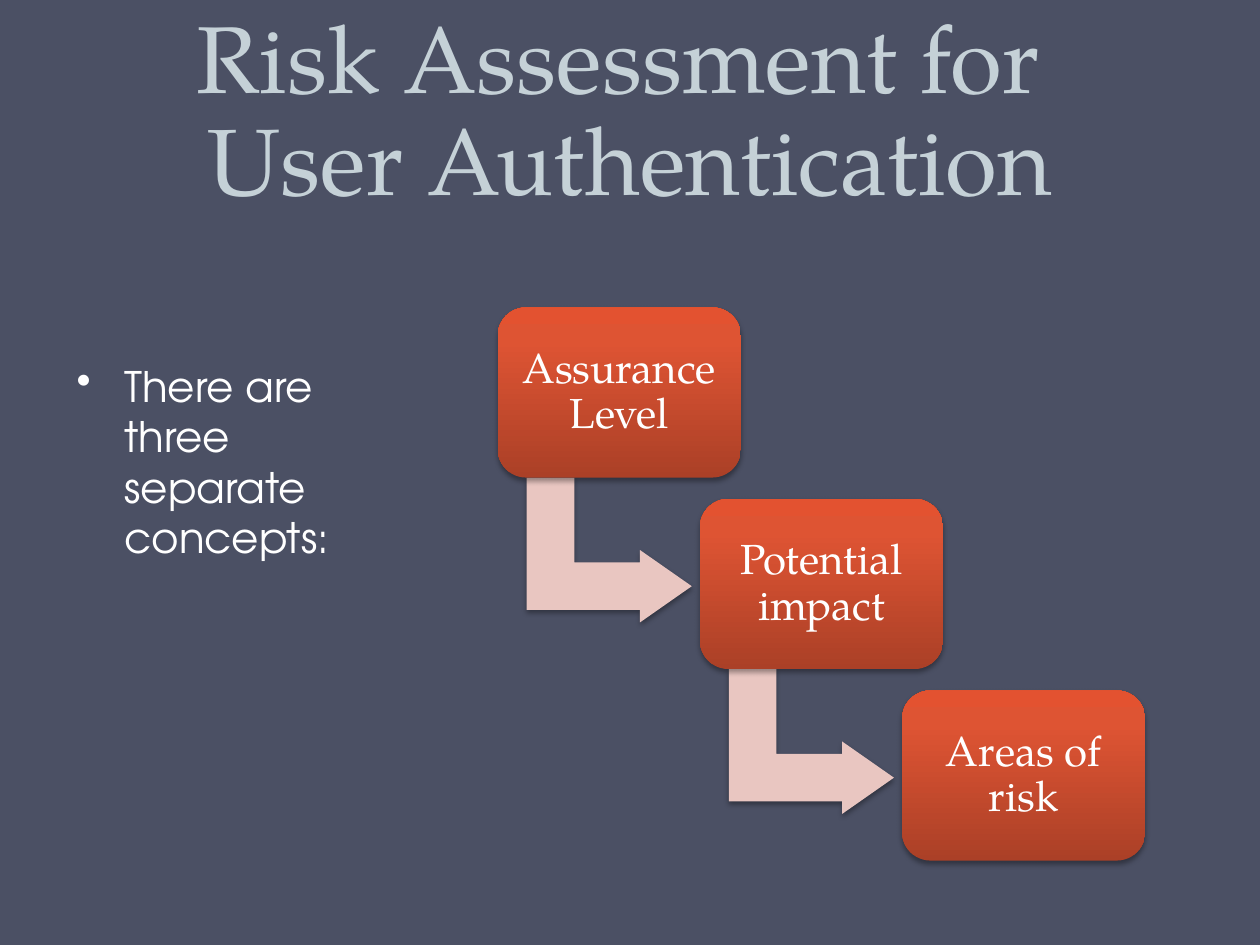
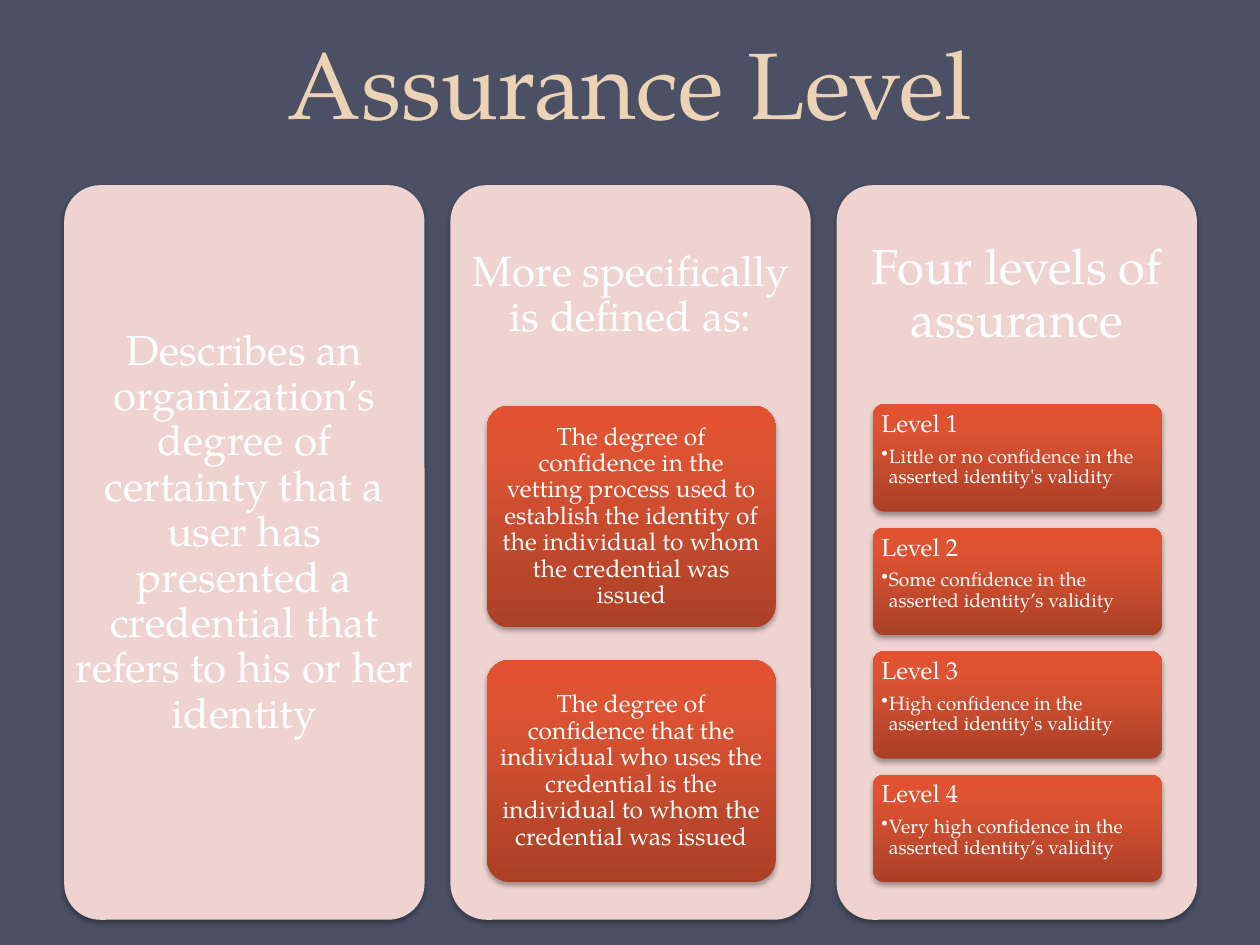
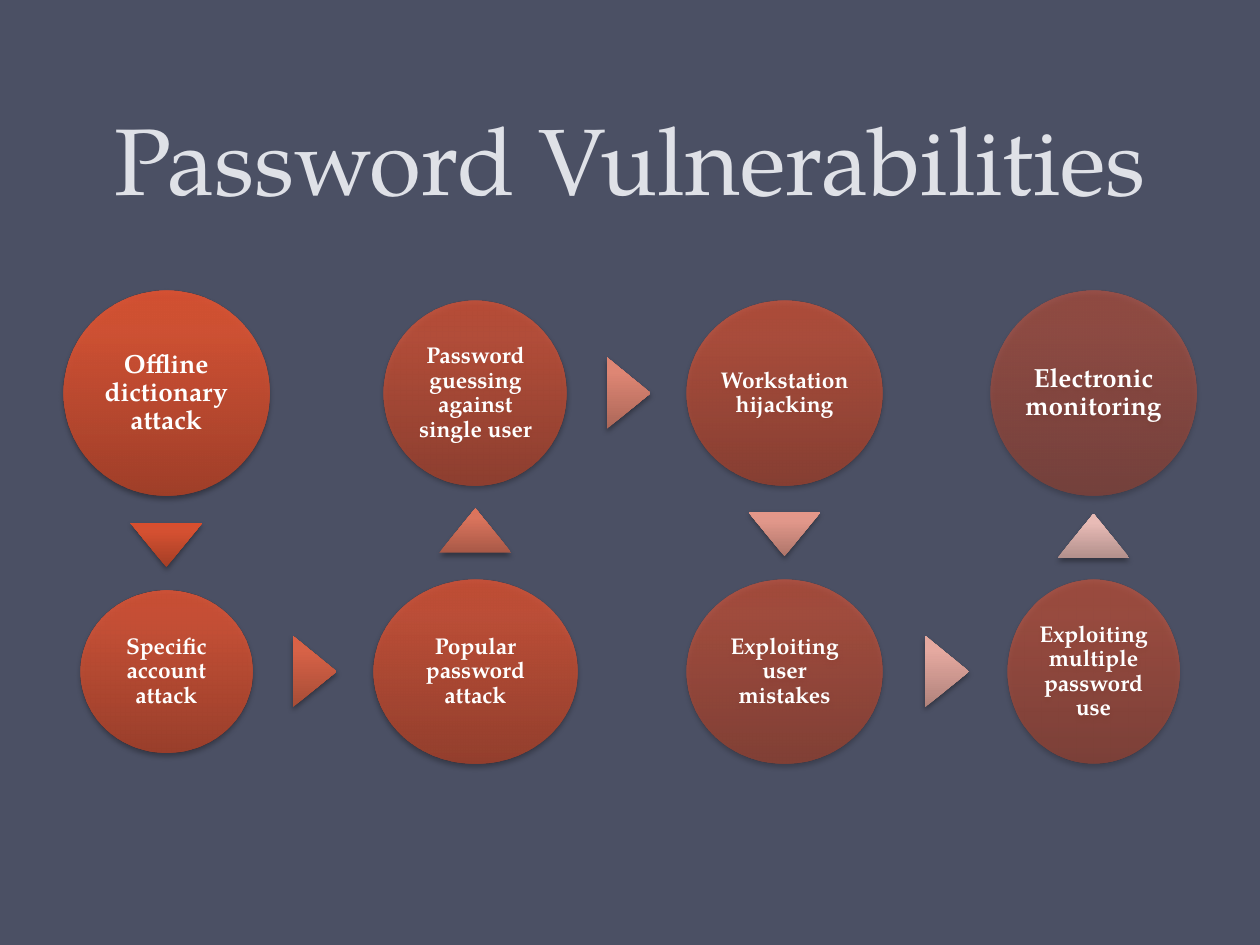
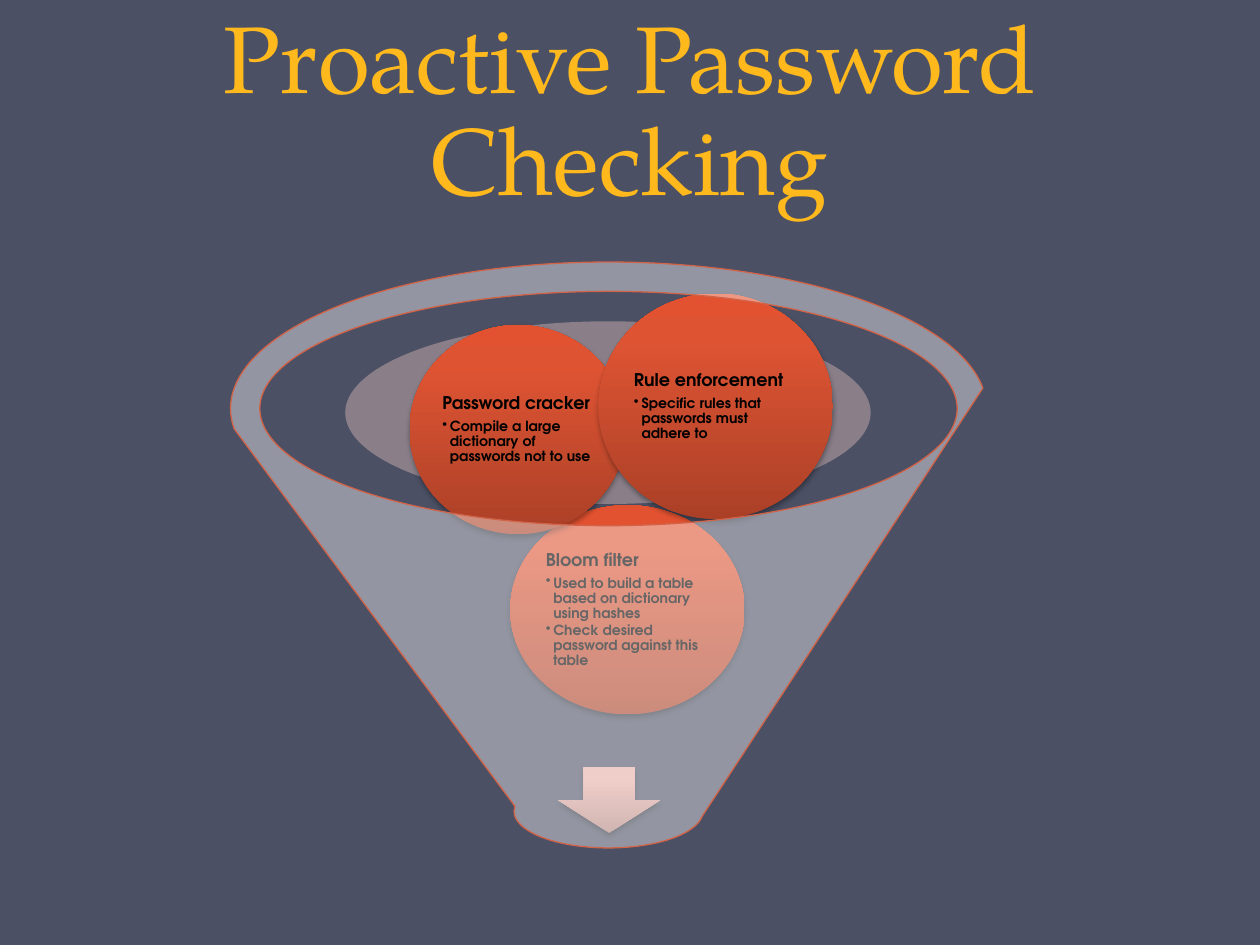
from copy import deepcopy
from dataclasses import dataclass

from lxml.etree import SubElement
from pptx import Presentation
from pptx.dml.color import RGBColor as Color
from pptx.enum.shapes import MSO_SHAPE as Preset
from pptx.enum.text import MSO_ANCHOR as Anchor, PP_ALIGN as Align
from pptx.oxml.ns import qn
from pptx.util import Inches, Pt


@dataclass(frozen=True)
class Theme:
    background: Color = Color.from_string("4B5064")
    white: Color = Color.from_string("FFFFFF")
    black: Color = Color.from_string("000000")
    pink: Color = Color.from_string("E9C6C1")
    panel: Color = Color.from_string("EED3D0")
    rim: Color = Color.from_string("D16349")
    title_outline: str = "FF6600"
    red: tuple = ("AB4027", "DE5433", "E35230")
    first_arrow: tuple = ("A43E25", "D45031", "D84E2E")
    last_arrow: tuple = ("B3908C", "E8BBB6", "EABCB6")
    funnel_arrow: tuple = ("B1847F", "E5ACA4", "E8ACA4")
    stops: tuple = (0, 0.8, 1)
    serif: str = "TeX Gyre Pagella"
    sans: str = "TeX Gyre Adventor"
    title_size: int = 54
    title_leading: int = 58
    heading_size: int = 28
    large_size: int = 24
    circle_size: int = 15
    small_circle_size: int = 13
    card_size: int = 14
    card_bullet_size: int = 11
    ball_size: int = 10
    ball_bullet_size: int = 8


theme = Theme()
presentation = Presentation()
presentation.slide_width = Inches(10)
presentation.slide_height = Inches(7.5)
GRID = presentation.slide_width / 100


def draw(slide, preset, column, row, columns, rows, fill=None, opacity=100,
         shadow=True, rotation=0, adjustments=()):
    box = [round(length * GRID) for length in (column, row, columns, rows)]
    if preset is None:
        return slide.shapes.add_textbox(*box)
    shape = slide.shapes.add_shape(preset, *box)
    shape.rotation = rotation
    for index, value in enumerate(adjustments):
        shape.adjustments[index] = value
    properties = shape._element.spPr
    if isinstance(fill, Color):
        shape.fill.solid()
        shape.fill.fore_color.rgb = fill
    else:
        shape.fill.gradient()
        shape.fill.gradient_angle = 90
        properties.find(qn("a:gradFill")).set("rotWithShape", "0")
        stop_list = properties.find(".//" + qn("a:gsLst"))
        stop_list.append(deepcopy(stop_list[0]))
        for stop, position, color in zip(shape.fill.gradient_stops, theme.stops, fill):
            stop.position = position
            stop.color.rgb = Color.from_string(color)
    if opacity < 100:
        for color in properties.iter(qn("a:srgbClr")):
            SubElement(color, qn("a:alpha"), val=str(round(opacity * 1000)))
    shape.line.fill.background()
    shape.shadow.inherit = False
    if shadow:
        outer = SubElement(properties.find(qn("a:effectLst")), qn("a:outerShdw"),
                           blurRad=str(Pt(3.1)), dist=str(Pt(1.8)),
                           dir="5400000", rotWithShape="0")
        color = SubElement(outer, qn("a:srgbClr"), val=str(theme.black))
        SubElement(color, qn("a:alpha"), val="35000")
    return shape


def write(shape, text, size, bullets=(), bullet_size=None, color=theme.white,
          font=theme.serif, bold=False, align=Align.CENTER, anchor=Anchor.MIDDLE,
          margins=(0.1, 0.1), spacing=0.9, indent=0.06, after=0.35):
    frame = shape.text_frame
    frame.word_wrap = True
    frame.vertical_anchor = anchor
    frame.margin_left = frame.margin_right = Inches(margins[0])
    frame.margin_top = frame.margin_bottom = Inches(margins[1])
    frame.text = "\n".join([text] * bool(text) + list(bullets))
    for index, paragraph in enumerate(frame.paragraphs):
        bulleted = index > 0 or not text
        paragraph.alignment = align
        paragraph.line_spacing = spacing
        paragraph_size = bullet_size if bulleted else size
        paragraph.space_after = Pt(round(paragraph_size * (0.15 if index else after), 1))
        if bulleted:
            paragraph.level = 1 if text else 0
            settings = paragraph._p.get_or_add_pPr()
            settings.set("marL", str(Inches(indent)))
            settings.set("indent", str(-Inches(indent)))
            SubElement(settings, qn("a:buChar"), char="•")
        for run in paragraph.runs:
            run.font.size = Pt(paragraph_size)
            run.font.name = font
            run.font.bold = bold
            run.font.color.rgb = color


slides = []
titles = []
for text, color, rows in [
    ("Risk Assessment for \vUser Authentication", "C5D1D7", 17.5),
    ("Assurance Level", "EDD3B6", 11.5),
    ("Password Vulnerabilities", "DFE1E7", 17.5),
    ("Proactive Password Checking", "FFB91D", 17.5),
]:
    slide = presentation.slides.add_slide(presentation.slide_layouts[6])
    slide.background.fill.solid()
    slide.background.fill.fore_color.rgb = theme.background
    title = draw(slide, None, 5, 0, 90, rows)
    write(title, text, theme.title_size, color=Color.from_string(color), anchor=Anchor.BOTTOM,
          margins=(0.1, 0.05), spacing=Pt(theme.title_leading), after=0)
    slides.append(slide)
    titles.append(title)
concepts, assurance, vulnerabilities, checking = slides

body = draw(concepts, None, 5.1, 28.1, 27.6, 31.4)
write(body, "", theme.large_size, ["There are three separate concepts:"], theme.large_size,
      font=theme.sans, align=Align.LEFT, anchor=Anchor.TOP, margins=(0.1, 0.05),
      spacing=1.0, indent=0.38, after=0)
steps = ["Assurance Level", "Potential impact", "Areas of risk"]
for index, text in enumerate(steps):
    column, row = 39.5 + 16.05 * index, 24.4 + 15.2 * index
    if index < len(steps) - 1:
        draw(concepts, Preset.BENT_UP_ARROW, column + 3.1, row + 12.7, 11.5, 13.1, theme.pink,
             rotation=90, adjustments=(0.328, 0.25, 0.358))
    step = draw(concepts, Preset.ROUNDED_RECTANGLE, column, row, 19.3, 13.5, theme.red,
                adjustments=(0.167,))
    write(step, text, theme.large_size)

run_properties = titles[1].text_frame.paragraphs[0].runs[0]._r.get_or_add_rPr()
outline = SubElement(run_properties, qn("a:ln"), w=str(Pt(0.75)))
SubElement(SubElement(outline, qn("a:solidFill")), qn("a:srgbClr"), val=theme.title_outline)
run_properties.insert(0, outline)

panels = [
    ("Describes an organization’s degree of certainty that a user has presented "
     "a credential that refers to his or her identity", theme.large_size, 55.2, 0.06, 0, 0, 0, []),
    ("More specifically is defined as:", theme.large_size, 17.5, 0.1, 32.2, 20.2, 17.6, [
        ("The degree of confidence in the vetting process used to establish the identity "
         "of the individual to whom the credential was issued", []),
        ("The degree of confidence that the individual who uses the credential is the "
         "individual to whom the credential was issued", []),
    ]),
    ("Four levels of assurance", theme.heading_size, 17.5, 0.12, 32.1, 9.8, 8.5, [
        ("Level 1", ["Little or no confidence in the asserted identity's validity"]),
        ("Level 2", ["Some confidence in the asserted identity’s validity"]),
        ("Level 3", ["High confidence in the asserted identity's validity"]),
        ("Level 4", ["Very high confidence in the asserted identity’s validity"]),
    ]),
]
for index, (text, size, rows, margin, first_row, row_step, card_rows, cards) in enumerate(panels):
    column = 5.1 + 30.65 * index
    draw(assurance, Preset.ROUNDED_RECTANGLE, column, 14.7, 28.6, 58.3, theme.panel,
         adjustments=(0.1,))
    heading = draw(assurance, None, column, 14.7, 28.6, rows)
    write(heading, text, size, margins=(margin, margin))
    for card_index, (card_text, bullets) in enumerate(cards):
        card = draw(assurance, Preset.ROUNDED_RECTANGLE, column + 2.9,
                    first_row + row_step * card_index, 22.9, card_rows, theme.red,
                    adjustments=(0.1,))
        write(card, card_text, theme.card_size, bullets, theme.card_bullet_size,
              align=Align.LEFT if bullets else Align.CENTER,
              anchor=Anchor.TOP if bullets else Anchor.MIDDLE, margins=(0.04, 0.03))

attacks = [
    ("Offline dictionary attack", 0, 0, 16.3, 16.3),
    ("Specific account attack", 0, 1, 13.6, 12.9),
    ("Popular password attack", 1, 1, 16.2, 14.6),
    ("Password guessing against single user", 1, 0, 14.5, 14.6),
    ("Workstation hijacking", 2, 0, 15.5, 14.6),
    ("Exploiting user mistakes", 2, 1, 15.5, 14.6),
    ("Exploiting multiple password use", 3, 1, 13.6, 14.6),
    ("Electronic monitoring", 3, 0, 16.3, 16.3),
]
ARROW_COLUMNS, ARROW_ROWS, ARROW_LEAD = 5.7, 3.5, 0.15
previous = None
for index, (text, place, line, columns, rows) in enumerate(attacks):
    x, y = 13.2 + 24.53 * place, 31.2 + 22.1 * line
    if previous:
        old_x, old_y, old_columns, old_rows = previous
        if x > old_x:
            rotation = 90
            arrow_x = (old_x + old_columns / 2 + x - columns / 2) / 2 + ARROW_LEAD
            arrow_y = y
        else:
            direction = 1 if y > old_y else -1
            rotation = 180 if direction > 0 else 0
            arrow_x = x
            arrow_y = ((old_y + y + direction * (old_rows - rows) / 2) / 2
                       + direction * ARROW_LEAD)
        share = (index - 1) / (len(attacks) - 2)
        shades = []
        for first, last in zip(theme.first_arrow, theme.last_arrow):
            channels = zip(Color.from_string(first), Color.from_string(last))
            shades.append(str(Color(*[round(a + (b - a) * share) for a, b in channels])))
        draw(vulnerabilities, Preset.ISOSCELES_TRIANGLE, arrow_x - ARROW_COLUMNS / 2,
             arrow_y - ARROW_ROWS / 2, ARROW_COLUMNS, ARROW_ROWS, shades, rotation=rotation)
    circle = draw(vulnerabilities, Preset.OVAL, x - columns / 2, y - rows / 2, columns, rows,
                  theme.red, opacity=90 - 40 * index / (len(attacks) - 1))
    size = theme.circle_size if index in (0, len(attacks) - 1) else theme.small_circle_size
    write(circle, text, size, bold=True, margins=(0.02, 0.02))
    previous = x, y, columns, rows

draw(checking, Preset.OVAL, 27.4, 25.5, 41.7, 14.5, theme.pink, opacity=40, shadow=False)
draw(checking, Preset.DOWN_ARROW, 44.3, 60.9, 8.1, 5.2, theme.funnel_arrow)
for text, bullets, column, row, columns, rows in [
    ("Bloom filter", ["Used to build a table based on dictionary using hashes",
                      "Check desired password against this table"], 40.5, 40.1, 18.6, 16.6),
    ("Password cracker", ["Compile a large dictionary of passwords not to use"],
     32.5, 25.8, 17.2, 16.6),
    ("Rule enforcement", ["Specific rules that passwords must adhere to"],
     47.5, 23.3, 18.6, 17.9),
]:
    ball = draw(checking, Preset.OVAL, column, row, columns, rows, theme.red)
    write(ball, text, theme.ball_size, bullets, theme.ball_bullet_size, color=theme.black,
          font=theme.sans, bold=True, align=Align.LEFT, margins=(0.01, 0.01))
funnel = draw(checking, Preset.FUNNEL, 18.3, 20.8, 60, 46.5, theme.white, opacity=40, shadow=False)
funnel.line.color.rgb = theme.rim
funnel.line.width = Pt(0.75)

presentation.save("out.pptx")
